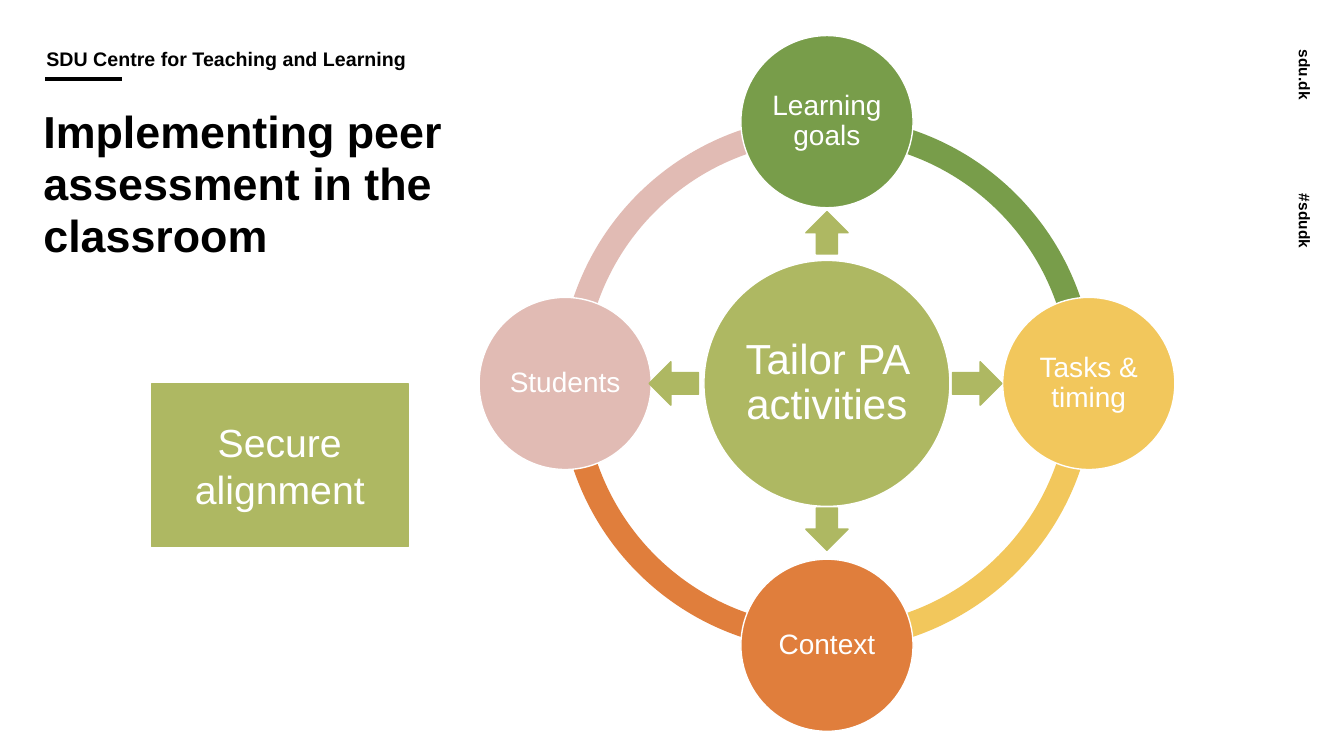
"""Build the slide on tailoring peer assessment activities."""
from lxml import etree
from pptx import Presentation
from pptx.dml.color import RGBColor
from pptx.enum import shapes, text
from pptx.oxml import ns
from pptx.util import Pt

BLACK = RGBColor(0x00, 0x00, 0x00)
WHITE = RGBColor(0xFF, 0xFF, 0xFF)
OLIVE = RGBColor(0xAE, 0xB8, 0x62)
GREEN = RGBColor(0x78, 0x9D, 0x4A)
YELLOW = RGBColor(0xF2, 0xC7, 0x5C)
ORANGE = RGBColor(0xE0, 0x7E, 0x3C)
PINK = RGBColor(0xE1, 0xBB, 0xB4)
KIND = shapes.MSO_SHAPE
ANCHOR = text.MSO_ANCHOR
ALIGN = text.PP_ALIGN


def write(shape, words, size, color=WHITE, bold=False, align=ALIGN.CENTER,
          anchor=ANCHOR.MIDDLE, pad=(0, 0, 0, 0), space=1.0):
    frame = shape.text_frame
    frame.word_wrap = True
    frame.auto_size = text.MSO_AUTO_SIZE.NONE
    frame.vertical_anchor = anchor
    frame.margin_left, frame.margin_top, frame.margin_right, frame.margin_bottom = map(Pt, pad)
    line = frame.paragraphs[0]
    line.text = words
    line.alignment = align
    line.line_spacing = space
    line.font.name = "Arial"
    line.font.size = Pt(size)
    line.font.bold = bold
    line.font.color.rgb = color


def draw(kind, x, y, width, height, fill, edge=None):
    shape = slide.shapes.add_shape(
        kind, Pt(x - width / 2), Pt(y - height / 2), Pt(width), Pt(height))
    shape.shadow.inherit = False
    shape.fill.solid()
    shape.fill.fore_color.rgb = fill
    if edge is None:
        shape.line.fill.background()
    else:
        shape.line.color.rgb = edge
        shape.line.width = Pt(1)
    return shape


deck = Presentation()
deck.slide_width, deck.slide_height = Pt(960), Pt(540)
slide = deck.slides.add_slide(deck.slide_layouts[5])

for words, top in (("sdu.dk", 56.9), ("#sdudk", 159.8)):
    tag = slide.shapes.add_textbox(Pt(904.3), Pt(top), Pt(72), Pt(29.5))
    tag.rotation = 90
    write(tag, words, 11, color=BLACK, bold=True, align=ALIGN.LEFT, anchor=ANCHOR.BOTTOM)

rule = slide.shapes.add_connector(
    shapes.MSO_CONNECTOR.STRAIGHT, Pt(32.4), Pt(56.2), Pt(87.1), Pt(56.2))
rule.line.color.rgb = BLACK
rule.line.width = Pt(3)
etree.SubElement(rule._element.spPr, ns.qn("a:effectLst"))

header = slide.shapes.add_textbox(Pt(32.4), Pt(35.3), Pt(447.8), Pt(22.3))
write(header, "SDU Centre for Teaching and Learning", 14, color=BLACK, bold=True,
      align=ALIGN.LEFT, anchor=ANCHOR.BOTTOM, pad=(0.7, 0, 0, 7.2), space=0.9)

title = slide.shapes.title
title.left, title.top, title.width, title.height = Pt(31), Pt(76.3), Pt(334.8), Pt(154.8)
write(title, "Implementing peer assessment in the classroom", 32, color=BLACK, bold=True,
      align=ALIGN.LEFT, anchor=ANCHOR.TOP, space=0.97)

MID_X, MID_Y = 590.7, 273.9
ORBIT = 187

for start, end, fill in ((108, 162, PINK), (54, 108, ORANGE), (0, 54, YELLOW), (162, 0, GREEN)):
    arc = draw(KIND.BLOCK_ARC, MID_X, MID_Y, 382.3, 382.3, fill)
    for index, value in enumerate((start, end, 0.046)):
        arc.adjustments[index] = value

hub = draw(KIND.OVAL, MID_X, MID_Y, 175.7, 175.7, OLIVE, WHITE)
write(hub, "Tailor PA activities", 30, pad=(3, 3, 3, 3), space=0.9)

for words, across, down, fill in (
        ("Learning goals", 0, -1, GREEN),
        ("Tasks & timing", 1, 0, YELLOW),
        ("Context", 0, 1, ORANGE),
        ("Students", -1, 0, PINK)):
    node = draw(KIND.OVAL, MID_X + across * ORBIT, MID_Y + down * ORBIT, 123, 123, fill, WHITE)
    write(node, words, 20, pad=(2, 2, 2, 2), space=0.9)

for kind, across, down, width, height in (
        (KIND.UP_ARROW, 0, -107.6, 30.2, 30.2),
        (KIND.RIGHT_ARROW, 107.3, 0, 35.3, 31),
        (KIND.DOWN_ARROW, 0, 104.1, 30.2, 30.2),
        (KIND.LEFT_ARROW, -109.4, 0, 35.3, 31)):
    draw(kind, MID_X + across, MID_Y + down, width, height, OLIVE, OLIVE)

goal = draw(KIND.RECTANGLE, 199.8, 332.3, 183.6, 115.9, OLIVE, OLIVE)
write(goal, "Secure alignment", 28, pad=(5.8, 5.8, 5.8, 5.8))

deck.save("out.pptx")
